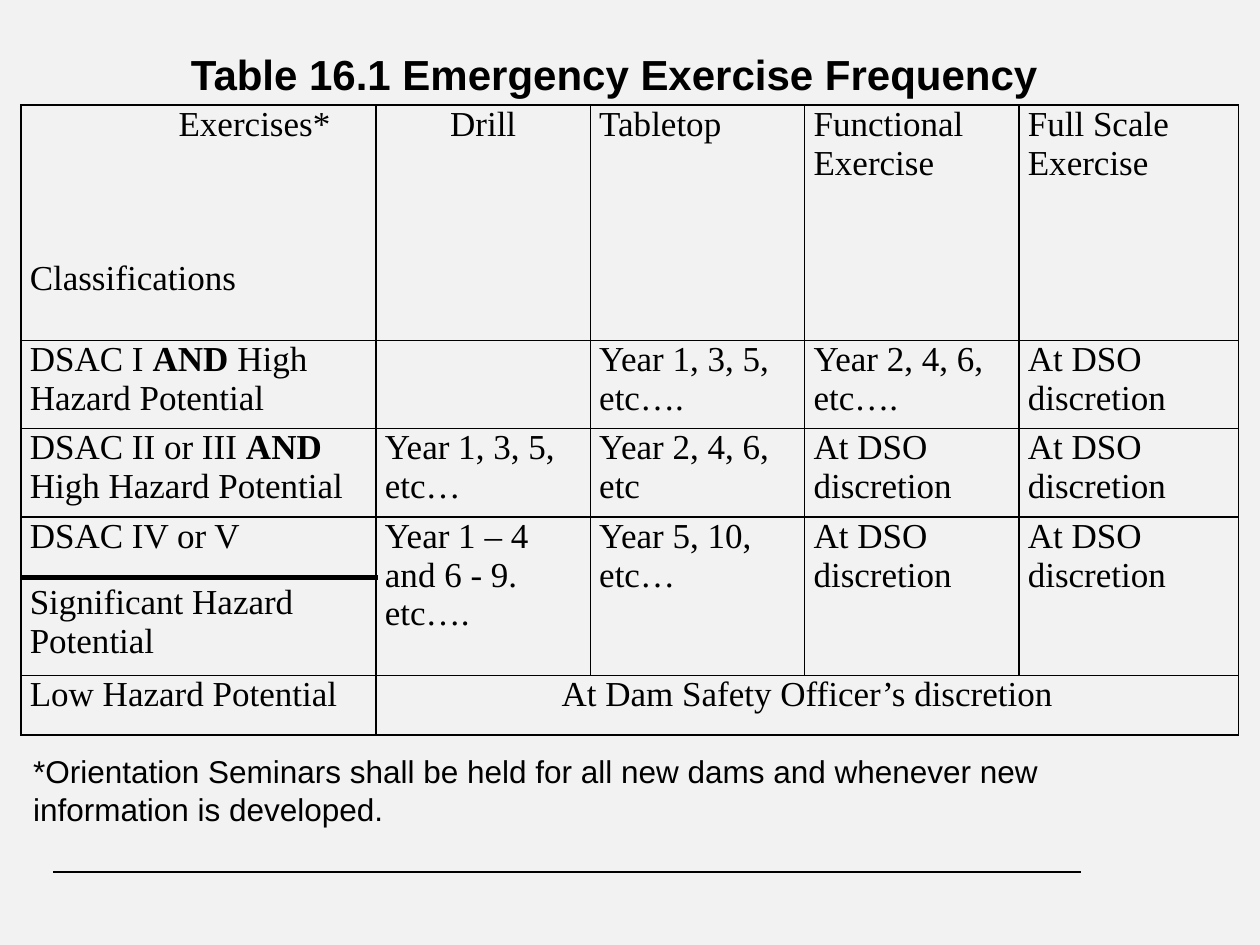
from lxml.etree import SubElement as Sub
from pptx import Presentation
from pptx.dml.color import RGBColor
from pptx.enum.shapes import MSO_CONNECTOR as Link
from pptx.enum.text import MSO_ANCHOR as Anchor, PP_ALIGN as Align
from pptx.oxml.ns import qn
from pptx.util import Cm, Pt

BLACK = RGBColor(0, 0, 0)
PALE = RGBColor(0xF2, 0xF2, 0xF2)

deck = Presentation()
deck.slide_width, deck.slide_height = Cm(25.4), Cm(19.05)
slide = deck.slides.add_slide(deck.slide_layouts[6])
slide.background.fill.solid()
slide.background.fill.fore_color.rgb = PALE


def style(para, face, size, bold=False):
    for run in para.runs:
        font = run.font
        font.name, font.size, font.bold = face, Pt(size), bold
        font.color.rgb = BLACK


def rule(left, right, top, width):
    line = slide.shapes.add_connector(
        Link.STRAIGHT, Cm(left), Cm(top), Cm(right), Cm(top))
    line.line.color.rgb = BLACK
    line.line.width = Pt(width)
    Sub(line._element.spPr, qn("a:effectLst"))


# Footer rule
rule(1.07, 21.79, 17.58, 0.75)

# Title and footnote
texts = [
    ("Table 16.1 Emergency Exercise Frequency",
     (1.27, 0.42, 22.23, 2.12), 24, True, Align.CENTER, Anchor.MIDDLE),
    ("*Orientation Seminars shall be held for all new dams and whenever new "
     "information is developed.",
     (0.42, 15.03, 20.96, 1.8), 18, False, Align.LEFT, Anchor.TOP),
]
for text, place, size, bold, align, anchor in texts:
    frame = slide.shapes.add_textbox(*map(Cm, place)).text_frame
    frame.word_wrap = True
    frame.vertical_anchor = anchor
    frame.text = text
    para = frame.paragraphs[0]
    para.alignment = align
    style(para, "Arial", size, bold)

# Table: bold words stand between asterisk pairs
odd, even, free = "Year 1, 3, 5, etc…", "Year 2, 4, 6, etc", "At DSO discretion"
rows = [
    ["Exercises*\nClassifications", "Drill", "Tabletop",
     "Functional Exercise", "Full Scale Exercise"],
    ["DSAC I **AND **High Hazard Potential", "", odd + ".", even + "….", free],
    ["DSAC II or III **AND **High Hazard Potential", odd, even, free, free],
    ["DSAC IV or V\nSignificant Hazard Potential",
     "Year 1 – 4 and 6 - 9. etc….", "Year 5, 10, etc…", free, free],
    ["Low Hazard Potential", "At Dam Safety Officer’s discretion", "", "", ""],
]
wide = [7.16, 4.32, 4.32, 4.32, 4.43]
high = [4.74, 1.78, 1.78, 3.2, 1.2]
table = slide.shapes.add_table(
    len(high), len(wide), Cm(0.42), Cm(2.12), Cm(sum(wide)), Cm(sum(high))).table
table.first_row = table.horz_banding = False
for col, width in zip(table.columns, wide):
    col.width = Cm(width)
for row, height in zip(table.rows, high):
    row.height = Cm(height)
table.cell(4, 1).merge(table.cell(4, 4))

for r, row in enumerate(rows):
    for c, text in enumerate(row):
        cell = table.cell(r, c)
        cell.margin_left = cell.margin_right = Cm(0.18)
        cell.margin_top = cell.margin_bottom = 0
        props = cell._tc.get_or_add_tcPr()
        for side in ("lnL", "lnR", "lnT", "lnB"):
            edge = Sub(props, qn("a:" + side), w=str(Pt(1)))
            Sub(Sub(edge, qn("a:solidFill")), qn("a:srgbClr"), val=str(BLACK))
        cell.fill.background()
        if not text:
            continue
        frame = cell.text_frame
        frame.text = text
        for para in frame.paragraphs:
            parts = para.text.split("**")
            para.text = parts[0]
            for part in parts[1:]:
                para.add_run().text = part
            style(para, "Times New Roman", 20)
            if len(parts) > 1:
                para.runs[1].font.bold = True

# Cell spacing and alignment
head = table.cell(0, 0).text_frame.paragraphs
head[0]._p.get_or_add_pPr().set("marL", str(Cm(3)))
head[1].space_before = Pt(66)
table.cell(3, 0).text_frame.paragraphs[1].space_before = Pt(15.5)
for r in (0, 4):
    table.cell(r, 1).text_frame.paragraphs[0].alignment = Align.CENTER

# Divider in the first column
rule(0.42, 7.62, 11.64, 3)

deck.save("out.pptx")
